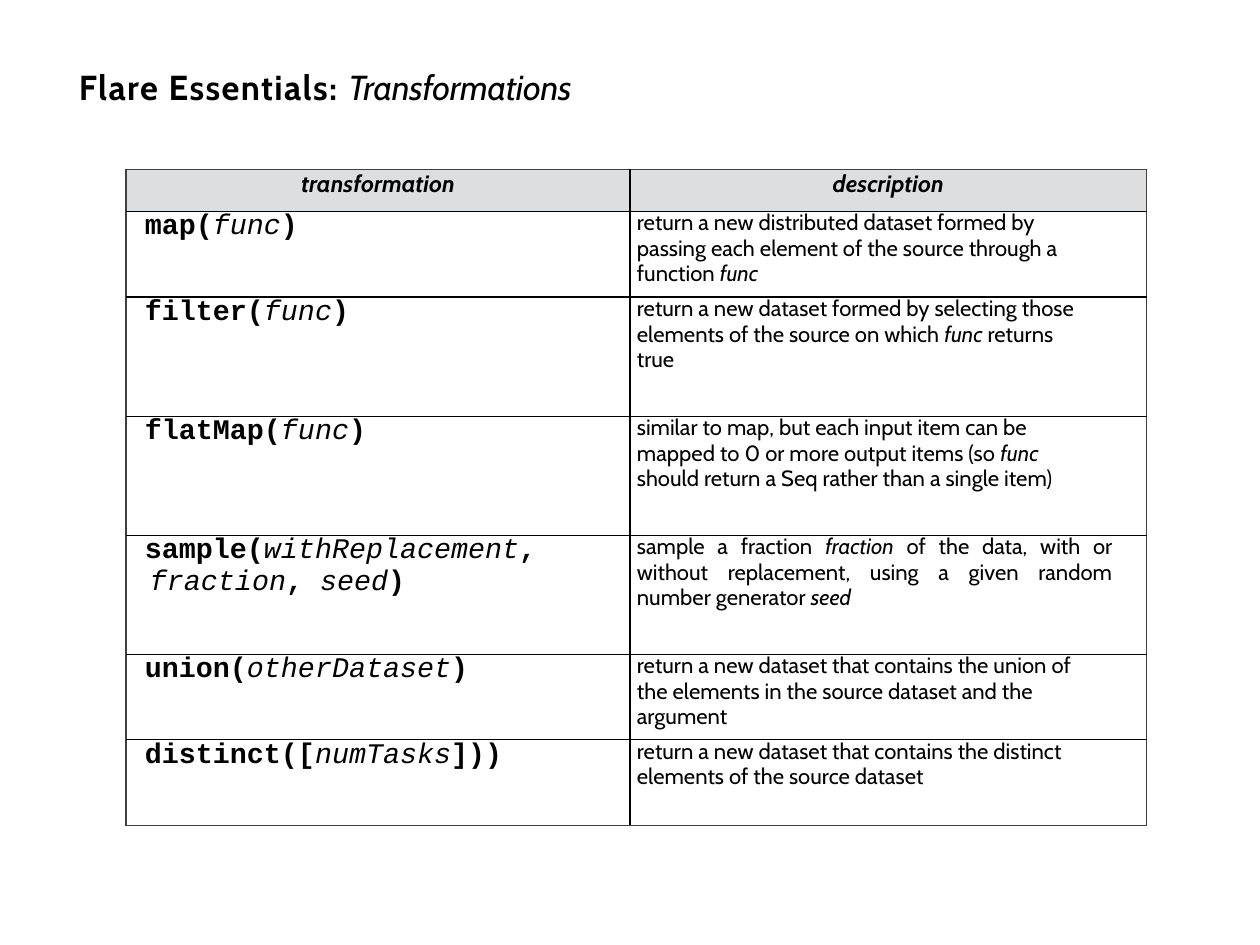
"""Build a slide with a table of dataset transformations."""
import pptx
import pptx.dml.color
import pptx.enum.text
import pptx.util
from lxml import etree

WIDTH, HEIGHT = pptx.util.Inches(11.11), pptx.util.Inches(8.33)
COLUMN, ROW = WIDTH / 100, HEIGHT / 100
ALIGN = pptx.enum.text.PP_ALIGN
HEADER = {"name": "Cabin", "size": pptx.util.Pt(15)}
CALL = {"name": "Courier New", "size": pptx.util.Pt(18)}
DESCRIPTION = {"name": "Cabin", "size": pptx.util.Pt(14)}
HEADING = {"name": "Cabin", "size": pptx.util.Pt(22)}


def color(value):
    return pptx.dml.color.RGBColor.from_string(value)


def write(paragraph, marked, formats, upright_bold, italic_bold=False):
    """Write text in which asterisks enclose italics."""
    for position, part in enumerate(marked.split("*")):
        if part:
            run = paragraph.add_run()
            run.text = part
            italic = position % 2 == 1
            bold = italic_bold if italic else upright_bold
            for key, value in {**formats, "italic": italic, "bold": bold}.items():
                setattr(run.font, key, value)
            run.font.color.rgb = color("000000")


transformations = [
    ("*transformation*", "*description*", 4.45),
    ("map(*func*)",
     "return a new distributed dataset formed by passing each element "
     "of the source through a function *func*", 9.1),
    ("filter(*func*)",
     "return a new dataset formed by selecting those elements "
     "of the source on which *func* returns true", 12.6),
    ("flatMap(*func*)",
     "similar to map, but each input item can be mapped to 0 or more output items "
     "(so *func* should return a Seq rather than a single item)", 12.6),
    ("sample(*withReplacement*,\n*fraction*, *seed*)",
     "sample a fraction *fraction* of the data, with or without replacement, "
     "using a given random number generator *seed*", 12.6),
    ("union(*otherDataset*)",
     "return a new dataset that contains the union of the elements "
     "in the source dataset and the argument", 9.05),
    ("distinct([*numTasks*]))",
     "return a new dataset that contains the distinct elements of the source dataset", 9.05),
]

deck = pptx.Presentation()
deck.slide_width, deck.slide_height = WIDTH, HEIGHT
slide = deck.slides.add_slide(deck.slide_layouts[5])

title = slide.shapes.title
title.left, title.top = int(6.25 * COLUMN), int(7 * ROW)
title.width, title.height = int(87.5 * COLUMN), int(4.5 * ROW)
frame_format = {"margin_left": 0, "margin_top": 0, "margin_right": 0, "margin_bottom": 0,
                "vertical_anchor": pptx.enum.text.MSO_ANCHOR.TOP,
                "auto_size": pptx.enum.text.MSO_AUTO_SIZE.NONE, "word_wrap": True}
for key, value in frame_format.items():
    setattr(title.text_frame, key, value)
heading = title.text_frame.paragraphs[0]
heading.alignment = ALIGN.LEFT
write(heading, "Flare Essentials: *Transformations*", HEADING, True)
for run, spacing in zip(heading.runs, ("90", "-20")):
    run.font._element.set("spc", spacing)

last = len(transformations) - 1
table = slide.shapes.add_table(
    last + 1, 2, int(10 * COLUMN), int(17.9 * ROW), int(81 * COLUMN), int(69.45 * ROW)).table
table.first_row = table.horz_banding = False
for column, share in zip(table.columns, (40, 41)):
    column.width = int(share * COLUMN)

for row, (call, description, share) in enumerate(transformations):
    table.rows[row].height = int(share * ROW)
    for column, text in enumerate((call, description)):
        cell = table.cell(row, column)
        cell.margin_left = cell.margin_right = cell.margin_top = cell.margin_bottom = 0
        properties = cell._tc.get_or_add_tcPr()
        outer_sides = {"L": column == 0, "R": column == 1, "T": row == 0, "B": row == last}
        for side, outer in outer_sides.items():
            line = etree.SubElement(properties, pptx.oxml.ns.qn("a:ln" + side),
                                    w=str(pptx.util.Pt(0.75 if outer else 1)))
            fill = etree.SubElement(line, pptx.oxml.ns.qn("a:solidFill"))
            etree.SubElement(fill, pptx.oxml.ns.qn("a:srgbClr"),
                             val="404040" if outer else "000000")
        first = cell.text_frame.paragraphs[0]
        if row == 0:
            cell.fill.solid()
            cell.fill.fore_color.rgb = color("DCDEE0")
            first.alignment = ALIGN.CENTER
            write(first, text, HEADER, True, True)
            continue
        cell.fill.background()
        if column == 0:
            cell.margin_left = int(1.5 * COLUMN)
            opening, *continuation = text.split("\n")
            write(first, opening, CALL, True)
            for arguments in continuation:
                paragraph = cell.text_frame.add_paragraph()
                paragraph._p.get_or_add_pPr().set("marL", str(int(0.4 * COLUMN)))
                write(paragraph, arguments, CALL, True)
        else:
            justified = call.startswith("sample")
            cell.margin_left = int(0.55 * COLUMN)
            cell.margin_right = int((2.7 if justified else 4.8) * COLUMN)
            first.alignment = ALIGN.JUSTIFY if justified else ALIGN.LEFT
            first.line_spacing = pptx.util.Pt(16)
            write(first, text, DESCRIPTION, False)

deck.save("out.pptx")
